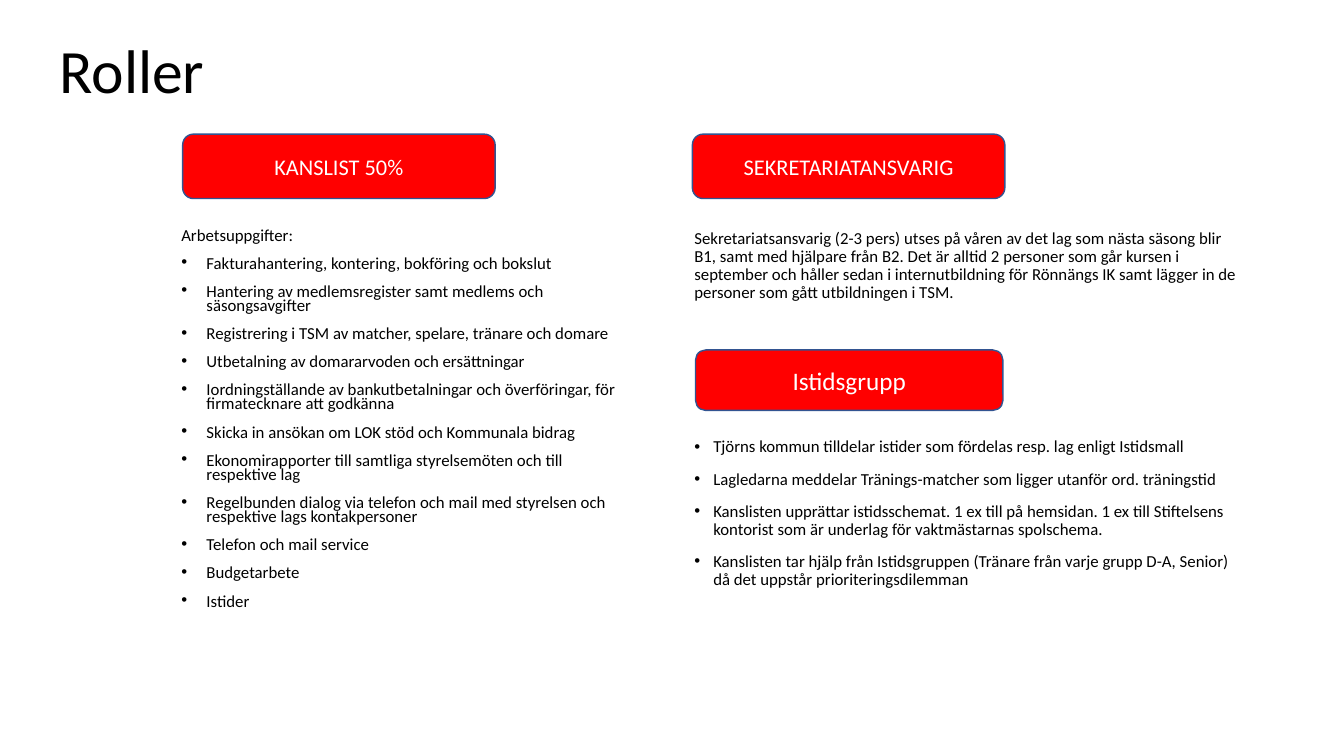
from dataclasses import dataclass

from lxml.etree import SubElement
from pptx import Presentation
from pptx.dml.color import RGBColor
from pptx.enum.shapes import MSO_SHAPE as Shape
from pptx.enum.text import MSO_ANCHOR as Anchor, MSO_AUTO_SIZE as AutoSize, PP_ALIGN as Align
from pptx.oxml.ns import qn
from pptx.util import Pt

FONT = "Calibri"
COLORS = {"text": "000000", "banner": "FF0000", "outline": "325491", "label": "FFFFFF"}


@dataclass
class Banner:
    label: str
    left: float
    top: float
    width: float
    height: float
    size: float = 16


@dataclass
class TextBlock:
    left: float
    top: float
    width: float
    height: float
    items: list[str]
    intro: str = ""
    indent: float = 18
    line_spacing: float = 0.9


BANNERS = [
    Banner("KANSLIST 50%", 130.5, 95.8, 223.2, 46),
    Banner("SEKRETARIATANSVARIG", 494.6, 95.8, 223.2, 46),
    Banner("Istidsgrupp", 496.8, 250, 219.6, 43.2, size=18),
]

BLOCKS = [
    TextBlock(122.4, 160.6, 329.8, 342.7, [
        "Fakturahantering, kontering, bokföring och bokslut",
        "Hantering av medlemsregister samt medlems och säsongsavgifter",
        "Registrering i TSM av matcher, spelare, tränare och domare",
        "Utbetalning av domararvoden och ersättningar",
        "Iordningställande av bankutbetalningar och överföringar, för firmatecknare att godkänna",
        "Skicka in ansökan om LOK stöd och Kommunala bidrag",
        "Ekonomirapporter till samtliga styrelsemöten och till respektive lag",
        "Regelbunden dialog via telefon och mail med styrelsen och respektive lags kontakpersoner",
        "Telefon och mail service",
        "Budgetarbete",
        "Istider",
    ], intro="Arbetsuppgifter:", line_spacing=0.7),
    TextBlock(488.9, 160.6, 406, 85.7, [], intro=(
        "Sekretariatsansvarig (2-3 pers) utses på våren av det lag som nästa säsong blir B1, "
        "samt med hjälpare från B2. Det är alltid 2 personer som går kursen i september och "
        "håller sedan i internutbildning för Rönnängs IK samt lägger in de personer som gått "
        "utbildningen i TSM.")),
    TextBlock(488.9, 309.6, 406, 85.7, [
        "Tjörns kommun tilldelar istider som fördelas resp. lag enligt Istidsmall",
        "Lagledarna meddelar Tränings-matcher som ligger utanför ord. träningstid",
        "Kanslisten upprättar istidsschemat. 1 ex till på hemsidan. 1 ex till Stiftelsens "
        "kontorist som är underlag för vaktmästarnas spolschema.",
        "Kanslisten tar hjälp från Istidsgruppen (Tränare från varje grupp D-A, Senior) "
        "då det uppstår prioriteringsdilemman",
    ], indent=13.5),
]


def rgb(name: str) -> RGBColor:
    return RGBColor.from_string(COLORS[name])


def style(p, size: float, color: str) -> None:
    p.font.name = FONT
    p.font.size = Pt(size)
    p.font.color.rgb = rgb(color)


def add_bullet(p, indent: float) -> None:
    props = p._p.get_or_add_pPr()
    props.set("marL", str(Pt(indent)))
    props.set("indent", str(-Pt(indent)))
    SubElement(props, qn("a:buFont"), typeface="Arial")
    SubElement(props, qn("a:buChar"), char="•")


def add_banner(slide, banner: Banner) -> None:
    sp = slide.shapes.add_shape(Shape.ROUNDED_RECTANGLE, Pt(banner.left), Pt(banner.top),
                                Pt(banner.width), Pt(banner.height))
    sp.shadow.inherit = False
    sp.fill.solid()
    sp.fill.fore_color.rgb = rgb("banner")
    sp.line.color.rgb = rgb("outline")
    sp.line.width = Pt(1)
    tf = sp.text_frame
    tf.vertical_anchor = Anchor.MIDDLE
    p = tf.paragraphs[0]
    p.text = banner.label
    p.alignment = Align.CENTER
    style(p, banner.size, "label")


def add_text_block(slide, block: TextBlock) -> None:
    tf = slide.shapes.add_textbox(Pt(block.left), Pt(block.top),
                                  Pt(block.width), Pt(block.height)).text_frame
    tf.word_wrap = True
    lines = ([block.intro] if block.intro else []) + block.items
    for i, line in enumerate(lines):
        p = tf.add_paragraph() if i else tf.paragraphs[0]
        p.text = line
        p.line_spacing = block.line_spacing
        if i:
            p.space_before = Pt(10)
        if line != block.intro:
            add_bullet(p, block.indent)
        style(p, 12, "text")


def add_title(slide, text: str) -> None:
    sp = slide.shapes.title
    sp.left, sp.top, sp.width, sp.height = Pt(35.3), Pt(0), Pt(429.8), Pt(104.4)
    tf = sp.text_frame
    tf.text = text
    tf.auto_size = AutoSize.NONE
    tf.vertical_anchor = Anchor.MIDDLE
    p = tf.paragraphs[0]
    p.alignment = Align.LEFT
    p.line_spacing = 0.9
    style(p, 44, "text")


def main() -> None:
    prs = Presentation()
    prs.slide_width, prs.slide_height = Pt(960), Pt(540)
    slide = prs.slides.add_slide(prs.slide_layouts.get_by_name("Title Only"))

    # Heading
    add_title(slide, "Roller")

    # Role banners
    for banner in BANNERS:
        add_banner(slide, banner)

    # Role descriptions
    for block in BLOCKS:
        add_text_block(slide, block)

    prs.save("out.pptx")


if __name__ == "__main__":
    main()
